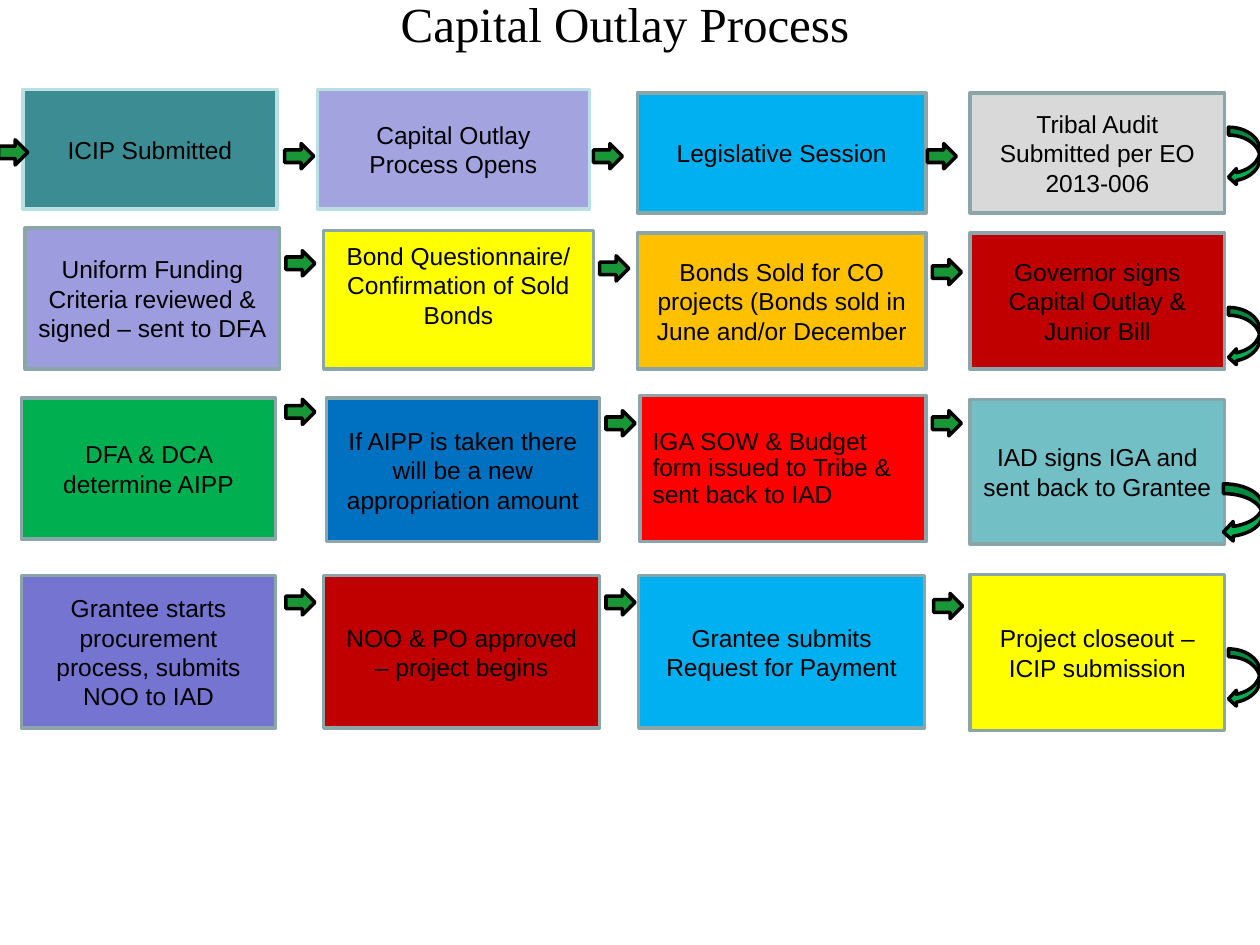
from pptx import Presentation
from pptx import util as u
from pptx.dml.color import RGBColor
from pptx.enum import shapes, text

COLORS = {
    "black": "000000", "teal": "3C8C93", "aqua": "72BFC5", "lilac": "A3A3E0",
    "lavender": "9C9CDF", "violet": "7575D1", "sky": "00B0F0", "blue": "0070C0",
    "gray": "D9D9D9", "yellow": "FFFF00", "orange": "FFC000", "red": "FF0000",
    "crimson": "C00000", "green": "00B050", "arrow": "199737",
    "edge": "8AA6A8", "pale": "BBE0E3",
}

STEPS = [
    ("ICIP Submitted", "teal", 13, 51.1, 145.4, 68.4, "pale"),
    ("Capital Outlay Process Opens", "lilac", 181.4, 51.1, 155.5, 68.4, "pale"),
    ("Legislative Session", "sky", 364.3, 53.3, 164.9, 68.4, "edge"),
    ("Tribal Audit Submitted per EO 2013-006", "gray", 554.4, 53.3, 145.4, 68.4, "edge"),
    ("Uniform Funding Criteria reviewed & signed – sent to DFA", "lavender",
     14.4, 130.3, 145.4, 80.6, "edge"),
    ("Bond Questionnaire/\nConfirmation of Sold Bonds", "yellow",
     185, 131.8, 154.1, 79.2, "edge"),
    ("Bonds Sold for CO projects (Bonds sold in June and/or December", "orange",
     364.3, 133.2, 164.9, 77.8, "edge"),
    ("Governor signs Capital Outlay & Junior Bill", "crimson",
     554.4, 133.2, 145.4, 77.8, "edge"),
    ("DFA & DCA determine AIPP", "green", 12.2, 227.5, 145.4, 80.6, "edge"),
    ("If AIPP is taken there will be a new appropriation amount", "blue",
     186.5, 227.5, 156.2, 82.1, "edge"),
    ("IGA SOW & Budget form issued to Tribe & sent back to IAD", "red",
     365.8, 226.1, 163.4, 83.5, "edge"),
    ("IAD signs IGA and sent back to Grantee", "aqua", 554.4, 228.2, 145.4, 82.8, "edge"),
    ("Grantee starts procurement process, submits NOO to IAD", "violet",
     12.2, 329, 145.4, 87.1, "edge"),
    ("NOO & PO approved – project begins", "crimson", 185, 329, 157.7, 87.1, "edge"),
    ("Grantee submits Request for Payment", "sky", 365, 329, 163.4, 87.1, "edge"),
    ("Project closeout – ICIP submission", "yellow", 554.4, 328.3, 145.4, 89.3, "edge"),
]

ARROWS = [
    (-0.7, 79.9), (162.7, 82.1), (339.1, 82.1), (529.9, 82.1),
    (163.4, 143.3), (342.7, 146.2), (532.8, 148.3),
    (163.4, 228.2), (346.3, 234.7), (532.8, 234.7),
    (163.4, 337), (346.3, 337), (533.5, 339.1),
]

RETURNS = [(702, 72.7, 18), (702, 175.7, 18), (699.1, 276.5, 22.3), (702, 370.8, 18)]


class Deck:
    font, size, line = "Arial", 14, 2

    def __init__(self, width, height):
        self.prs = Presentation()
        self.prs.slide_width, self.prs.slide_height = u.Pt(width), u.Pt(height)
        self.s = self.prs.slides.add_slide(self.prs.slide_layouts[5])

    def color(self, name):
        return RGBColor.from_string(COLORS[name])

    def label(self, tf, content, font, size, align):
        tf.text = content
        tf.word_wrap = True
        tf.vertical_anchor = text.MSO_ANCHOR.MIDDLE
        for p in tf.paragraphs:
            p.alignment = align
            for r in p.runs:
                r.font.name, r.font.size = font, u.Pt(size)
                r.font.color.rgb = self.color("black")

    def title(self, content, x, y, w, h):
        sp = self.s.shapes.title
        sp.left, sp.top, sp.width, sp.height = map(u.Pt, (x, y, w, h))
        self.label(sp.text_frame, content, "Times New Roman", 28, text.PP_ALIGN.CENTER)

    def shape(self, kind, x, y, w, h, fill, edge):
        sp = self.s.shapes.add_shape(kind, *map(u.Pt, (x, y, w, h)))
        sp.shadow.inherit = False
        sp.fill.solid()
        sp.fill.fore_color.rgb = self.color(fill)
        sp.line.color.rgb = self.color(edge)
        sp.line.width = u.Pt(self.line)
        return sp

    def box(self, content, fill, x, y, w, h, edge, align=text.PP_ALIGN.CENTER):
        sp = self.shape(shapes.MSO_SHAPE.RECTANGLE, x, y, w, h, fill, edge)
        self.label(sp.text_frame, content, self.font, self.size, align)
        return sp.text_frame

    def arrow(self, x, y):
        self.shape(shapes.MSO_SHAPE.RIGHT_ARROW, x, y, 16.6, 14.4, "arrow", "black")

    def return_arrow(self, x, y, w):
        self.shape(shapes.MSO_SHAPE.CURVED_LEFT_ARROW, x, y, w, 33.1, "green", "black")


def main():
    deck = Deck(720, 540)
    deck.title("Capital Outlay Process", 33.1, -3.6, 648, 33.8)
    frames = {step[0].split()[0]: deck.box(*step) for step in STEPS}
    frames["Bond"].margin_bottom = u.Pt(20.5)
    p = frames["IGA"].paragraphs[0]
    p.alignment = text.PP_ALIGN.LEFT
    p.line_spacing = 0.9
    p.space_after = u.Pt(5)
    for place in ARROWS:
        deck.arrow(*place)
    for place in RETURNS:
        deck.return_arrow(*place)
    deck.prs.save("out.pptx")


if __name__ == "__main__":
    main()
